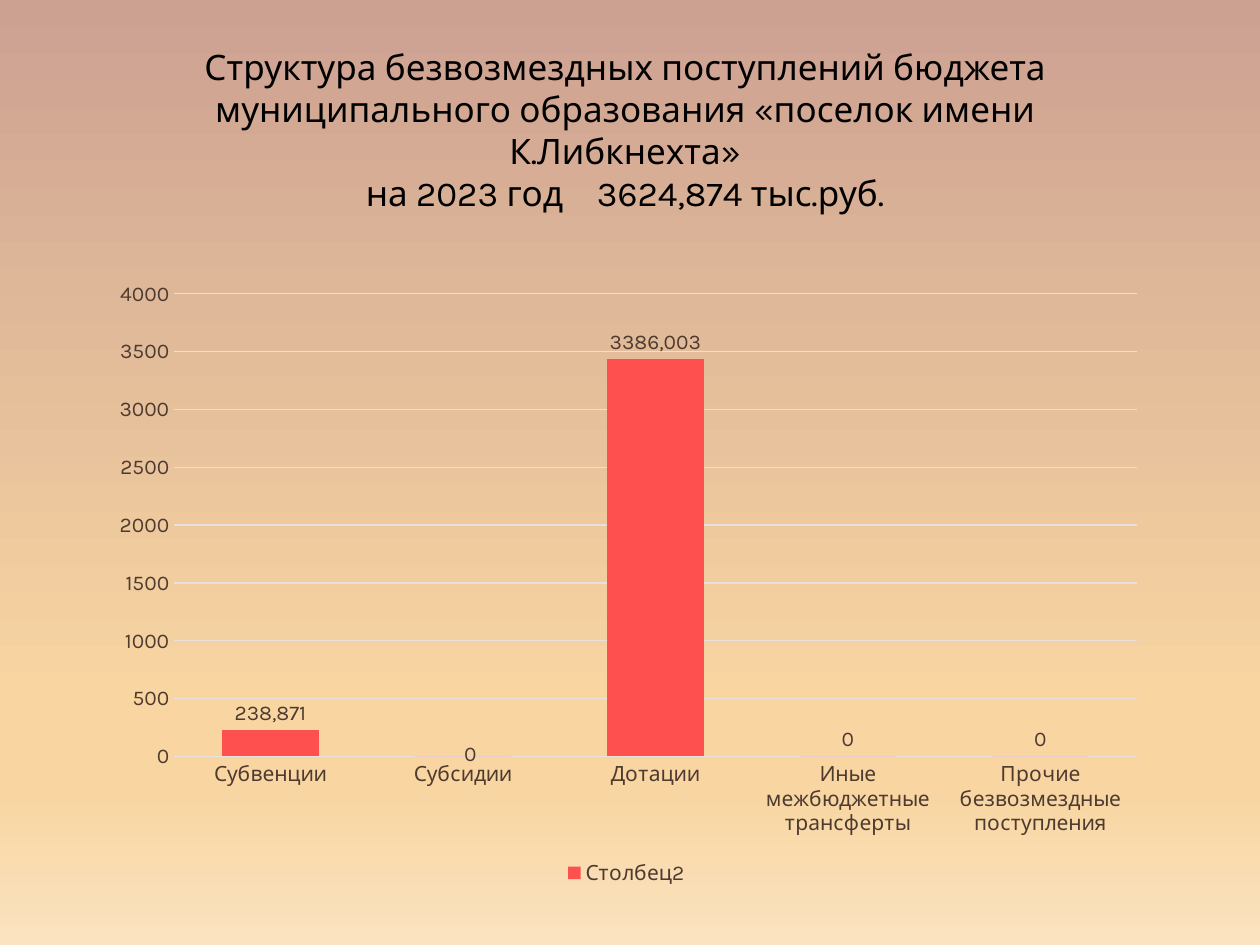
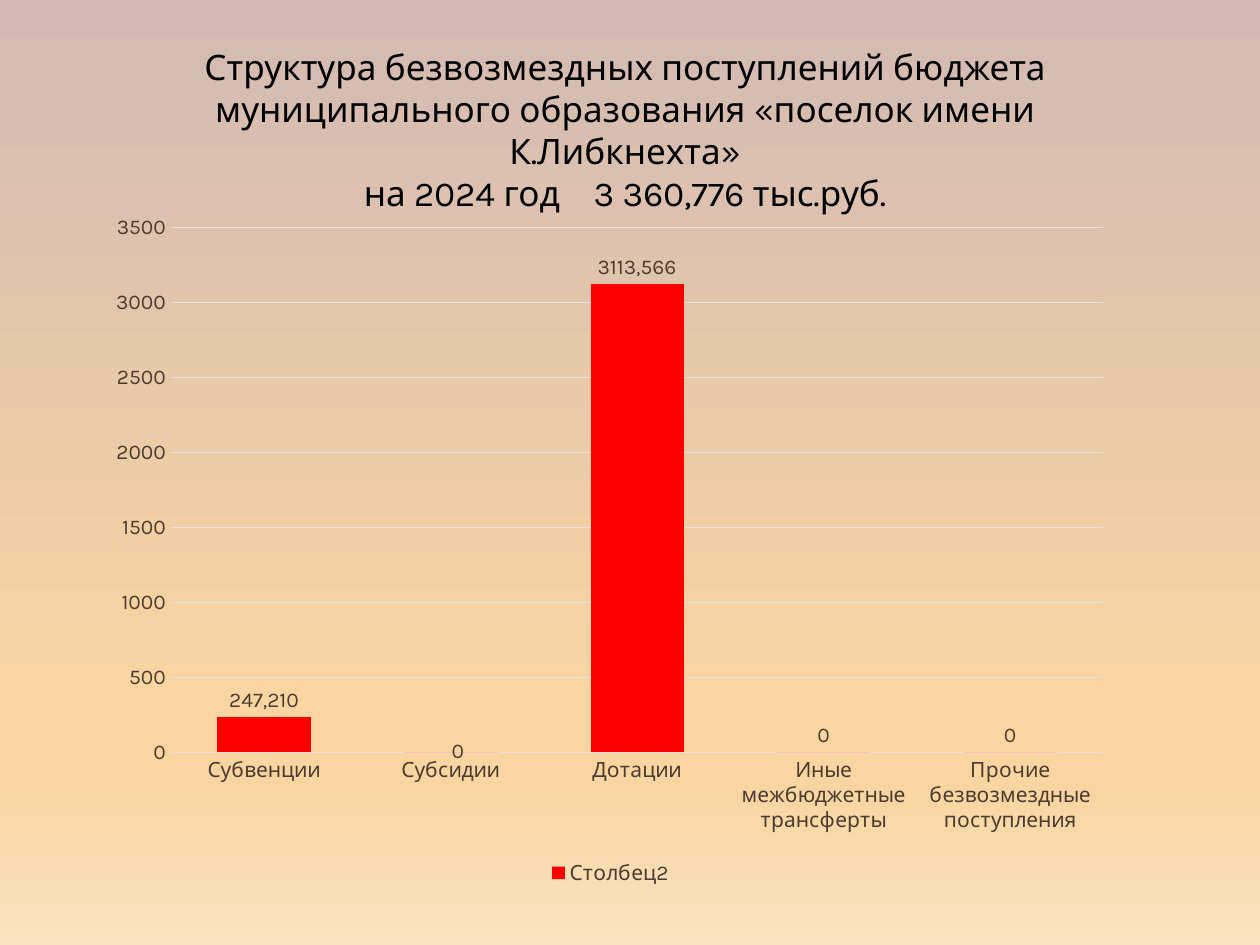
from lxml import etree
from pptx import Presentation
from pptx import util as u
from pptx.chart.data import CategoryChartData
from pptx.dml.color import RGBColor
from pptx.enum import chart as ch, text
from pptx.oxml.ns import qn

FONT = "Karla"
HEX = {"black": "000000", "brown": "4E3B30", "grid": "E9E0DB",
       "sand": "F8D5A1", "cream": "FAE3C0"}
CATS = ["Субвенции", "Субсидии", "Дотации", "Иные межбюджетные трансферты",
        "Прочие безвозмездные поступления"]
HEAD = ("Структура безвозмездных поступлений бюджета муниципального "
        "образования «поселок имени К.Либкнехта»")
TITLE_BOX = (1.78, 0.79, 21.64, 2.82)

YEARS = [
    dict(year="на 2023 год", total="3624,874 тыс.руб.", sky="CCA192",
         bar="FF5050", box=(1.93, 4.72, 21.39, 13.23),
         plot=(0.074, 0.091, 0.907, 0.705), top=4000,
         vals=[225.471, 0, 3434.151, 0, 0],
         marks={0: "238,871", 2: "3386,003"}),
    dict(year="на 2024 год", total="3 360,776 тыс.руб.", sky="D3B9B3",
         bar="FF0000", box=(1.93, 4.06, 20.75, 13.89),
         plot=(0.073, 0.038, 0.906, 0.762), top=3500,
         vals=[234.366, 0, 3121.955, 0, 0],
         marks={0: "247,210", 2: "3113,566"}),
]


def color(key):
    return RGBColor.from_string(HEX.get(key, key))


def style(font, size=12, key="brown"):
    font.name, font.size, font.bold = FONT, u.Pt(size), False
    font.color.rgb = color(key)


def rule(line):
    line.color.rgb = color("grid")
    line.width = u.Pt(0.75)


def paint(slide, sky):
    """Fill the background with the vertical four-stop gradient."""
    fill = slide.background.fill
    fill.gradient()
    fill.gradient_angle = 270
    stops = slide.element.find(".//" + qn("a:gsLst"))
    for old in list(stops):
        stops.remove(old)
    for pos, key in ((0, sky), (74, "sand"), (83, "sand"), (100, "cream")):
        stop = etree.SubElement(stops, qn("a:gs"), pos=str(pos * 1000))
        etree.SubElement(stop, qn("a:srgbClr"), val=HEX.get(key, key))


def add_title(slide, box, year, total):
    title = slide.shapes.title
    title.left, title.top, title.width, title.height = map(u.Cm, box)
    frame = title.text_frame
    frame.word_wrap = True
    frame.auto_size = text.MSO_AUTO_SIZE.SHAPE_TO_FIT_TEXT
    frame.vertical_anchor = text.MSO_ANCHOR.TOP
    frame.text = HEAD
    last = frame.add_paragraph()
    for part in (year, " ", total):
        last.add_run().text = part
    # One widely tracked space sets the sum apart from the year
    last.runs[1]._r.get_or_add_rPr().set("spc", "1450")
    for para in frame.paragraphs:
        para.alignment = text.PP_ALIGN.CENTER
        for run in para.runs:
            style(run.font, 20, "black")


def add_layout(parent, index, **parts):
    """Insert a manual chart layout as the given child of parent."""
    layout = etree.Element(qn("c:layout"))
    manual = etree.SubElement(layout, qn("c:manualLayout"))
    for name, val in parts.items():
        etree.SubElement(manual, qn("c:" + name), val=str(val))
    parent.insert(index, layout)


def place_plot(chart, plot):
    area = chart._chartSpace.find(".//" + qn("c:plotArea"))
    for old in area.findall(qn("c:layout")):
        area.remove(old)
    x, y, w, h = plot
    add_layout(area, 0, layoutTarget="inner", xMode="edge", yMode="edge",
               x=x, y=y, w=w, h=h)


def set_axes(chart, top):
    cat, val = chart.category_axis, chart.value_axis
    for axis in (cat, val):
        axis.major_tick_mark = axis.minor_tick_mark = ch.XL_TICK_MARK.NONE
        style(axis.tick_labels.font)
    rule(cat.format.line)
    val.format.line.fill.background()
    val.has_major_gridlines = True
    rule(val.major_gridlines.format.line)
    val.minimum_scale, val.maximum_scale, val.major_unit = 0, top, 500


def set_labels(plot, series, marks):
    labels = series.data_labels
    labels.show_value = True
    labels.position = ch.XL_LABEL_POSITION.OUTSIDE_END
    style(labels.font)
    for i, mark in marks.items():
        label = series.points[i].data_label
        label.text_frame.text = mark
        style(label.text_frame.paragraphs[0].runs[0].font)
        label.position = ch.XL_LABEL_POSITION.OUTSIDE_END
    # The zero of the second column sits lower, on the axis
    low = series.points[1].data_label
    style(low.font)
    low.position = ch.XL_LABEL_POSITION.OUTSIDE_END
    for node in series._element.iter(qn("c:dLbl")):
        if node.find(qn("c:idx")).get("val") == "1":
            add_layout(node, 1, x=0.007, y=0.024)


def add_bars(slide, box, plot, top, vals, marks, bar):
    data = CategoryChartData()
    data.categories = CATS
    data.add_series("Столбец2", vals)
    chart = slide.shapes.add_chart(ch.XL_CHART_TYPE.COLUMN_CLUSTERED,
                                   *map(u.Cm, box), data).chart
    style(chart.font, 10, "black")
    chart.has_title = False
    chart.has_legend = True
    chart.legend.position = ch.XL_LEGEND_POSITION.BOTTOM
    chart.legend.include_in_layout = False
    style(chart.legend.font)
    bars = chart.plots[0]
    bars.gap_width, bars.overlap = 100, -24
    bars.vary_by_categories = False
    series = bars.series[0]
    series.format.fill.solid()
    series.format.fill.fore_color.rgb = color(bar)
    set_axes(chart, top)
    set_labels(bars, series, marks)
    place_plot(chart, plot)


def add_year(deck, year, total, sky, **bars):
    slide = deck.slides.add_slide(deck.slide_layouts[5])
    paint(slide, sky)
    add_title(slide, TITLE_BOX, year, total)
    add_bars(slide, **bars)


def main():
    deck = Presentation()
    deck.slide_width, deck.slide_height = u.Cm(25.4), u.Cm(19.05)
    for item in YEARS:
        add_year(deck, **item)
    deck.save("out.pptx")


if __name__ == "__main__":
    main()
